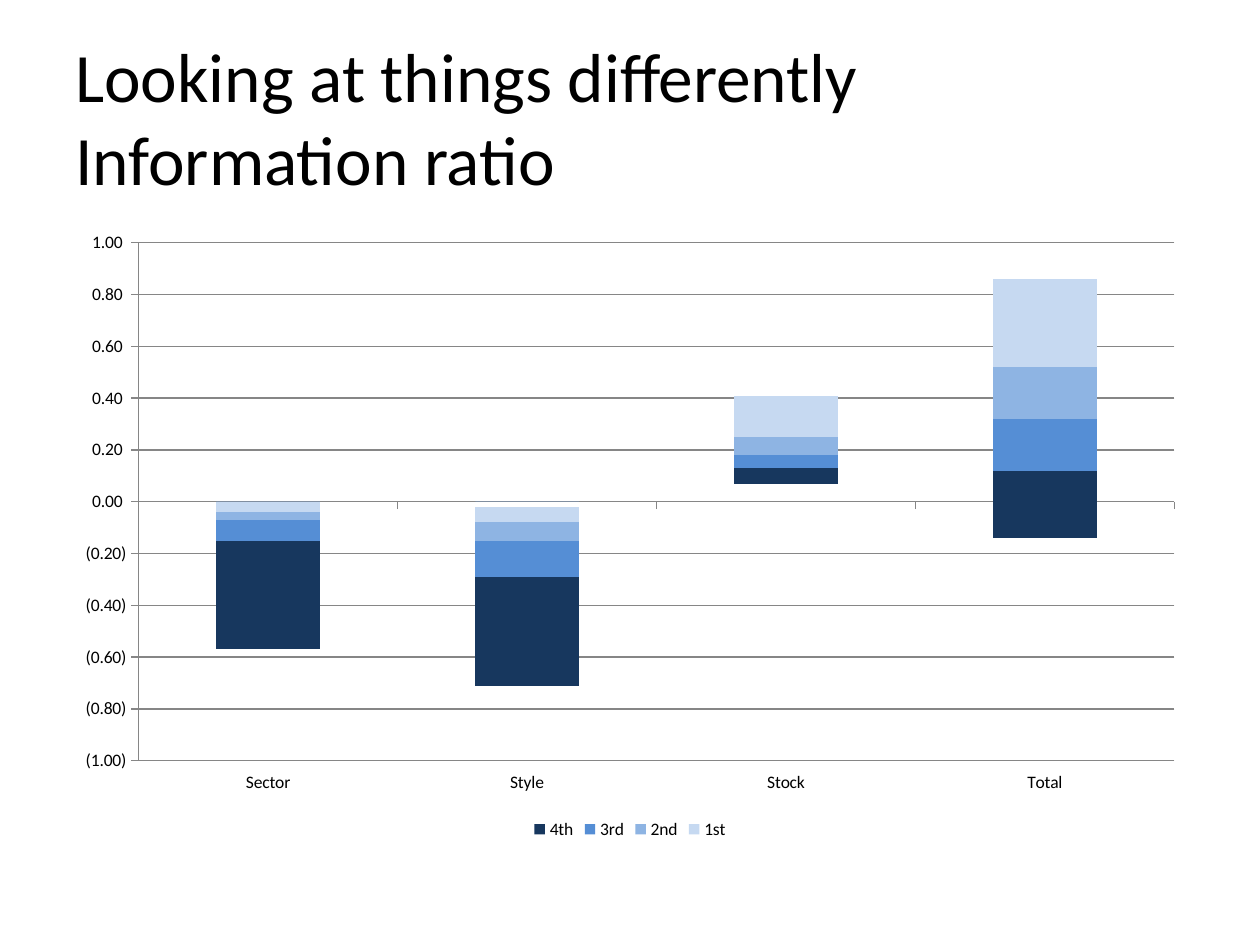
from dataclasses import dataclass

from lxml import etree
from pptx import Presentation
from pptx.chart.data import CategoryChartData
from pptx.dml.color import RGBColor
from pptx.enum.chart import (XL_CHART_TYPE, XL_LEGEND_POSITION,
                             XL_TICK_LABEL_POSITION, XL_TICK_MARK)
from pptx.enum.text import MSO_ANCHOR
from pptx.oxml.ns import qn
from pptx.util import Inches, Pt

STACKED = XL_CHART_TYPE.COLUMN_STACKED
LEGEND_BOTTOM = XL_LEGEND_POSITION.BOTTOM
LABELS_LOW = XL_TICK_LABEL_POSITION.LOW
TICK_OUTSIDE = XL_TICK_MARK.OUTSIDE
TICK_NONE = XL_TICK_MARK.NONE
MIDDLE = MSO_ANCHOR.MIDDLE


@dataclass(frozen=True)
class Theme:
    """Fonts, type sizes and colours of the slide."""
    font: str = "Calibri"
    title_size: float = 39.6
    chart_size: float = 10
    text: str = "000000"
    axis: str = "868686"
    first: str = "C6D9F1"
    second: str = "8EB4E3"
    third: str = "558ED5"
    fourth: str = "17375E"


THEME = Theme()
CATEGORIES = ("Sector", "Style", "Stock", "Total")
SERIES = (
    ("Series 1", (0, 0, 0.07, 0), None),
    ("4th", (0, 0, 0.06, 0.12), THEME.fourth),
    ("3rd", (0, 0, 0.05, 0.2), THEME.third),
    ("2nd", (0, 0, 0.07, 0.2), THEME.second),
    ("1st", (0, 0, 0.16, 0.34), THEME.first),
    ("Series 6", (0, -0.02, 0, 0), None),
    ("Series 7", (-0.04, -0.06, 0, 0), THEME.first),
    ("Series 8", (-0.03, -0.07, 0, 0), THEME.second),
    ("Series 9", (-0.08, -0.14, 0, 0), THEME.third),
    ("Series 10", (-0.42, -0.42, 0, -0.14), THEME.fourth),
)


def apply_format(target, values):
    """Set every attribute named in a dict."""
    for name, value in values.items():
        setattr(target, name, value)


def style_font(font, size):
    """Give a font the theme face and text colour at one size."""
    apply_format(font, {"name": THEME.font, "size": Pt(size)})
    font.color.rgb = RGBColor.from_string(THEME.text)


def style_line(line):
    """Draw an axis or grid line in the axis colour."""
    line.color.rgb = RGBColor.from_string(THEME.axis)
    line.width = Pt(0.75)


def add_title(page, text):
    """Place the title, vertically centred in its box."""
    box = page.shapes.add_textbox(Inches(0.5), Inches(0.3), Inches(9), Inches(1.25))
    frame = box.text_frame
    apply_format(frame, {"word_wrap": True, "vertical_anchor": MIDDLE, "text": text})
    for span in frame.paragraphs[0].runs:
        style_font(span.font, THEME.title_size)


def style_series(series, color):
    """Fill a series, or leave a spacer series unfilled."""
    series.invert_if_negative = False
    if color:
        series.format.fill.solid()
        series.format.fill.fore_color.rgb = RGBColor.from_string(color)
    else:
        series.format.fill.background()


def style_axes(chart):
    """Set scale, ticks, labels and grid lines."""
    for axis in (chart.category_axis, chart.value_axis):
        apply_format(axis, {"major_tick_mark": TICK_OUTSIDE, "minor_tick_mark": TICK_NONE})
        style_line(axis.format.line)
    chart.category_axis.tick_label_position = LABELS_LOW
    values = chart.value_axis
    apply_format(values, {"minimum_scale": -1, "maximum_scale": 1,
                          "major_unit": 0.2, "has_major_gridlines": True})
    apply_format(values.tick_labels, {"number_format": "#,##0.00_);\\(#,##0.00\\)",
                                      "number_format_is_linked": False})
    style_line(values.major_gridlines.format.line)


def add_legend(chart, shown):
    """Show a bottom legend with only the named series."""
    chart.has_legend = True
    apply_format(chart.legend, {"position": LEGEND_BOTTOM, "include_in_layout": False})
    hidden = [i for i, (name, _, _) in enumerate(SERIES) if name not in shown]
    position = chart.legend._element.find(qn("c:legendPos"))
    for index in reversed(hidden):
        entry = etree.Element(qn("c:legendEntry"))
        etree.SubElement(entry, qn("c:idx")).set("val", str(index))
        etree.SubElement(entry, qn("c:delete")).set("val", "1")
        position.addnext(entry)


def add_ratio_chart(page):
    """Add the stacked columns of information ratio by quartile."""
    data = CategoryChartData(number_format="0.00")
    data.categories = CATEGORIES
    for name, values, _ in SERIES:
        data.add_series(name, values)
    chart = page.shapes.add_chart(STACKED, Inches(0.5), Inches(1.75),
                                  Inches(9), Inches(4.95), data).chart
    chart.has_title = False
    style_font(chart.font, THEME.chart_size)
    plot = chart.plots[0]
    apply_format(plot, {"gap_width": 150, "overlap": 100, "vary_by_categories": False})
    for series, (_, _, color) in zip(plot.series, SERIES):
        style_series(series, color)
    style_axes(chart)
    add_legend(chart, ("4th", "3rd", "2nd", "1st"))


def main():
    """Build and save the slide."""
    deck = Presentation()
    apply_format(deck, {"slide_width": Inches(10), "slide_height": Inches(7.5)})
    page = deck.slides.add_slide(deck.slide_layouts[6])
    add_title(page, "Looking at things differently\vInformation ratio")
    add_ratio_chart(page)
    deck.save("out.pptx")


if __name__ == "__main__":
    main()
